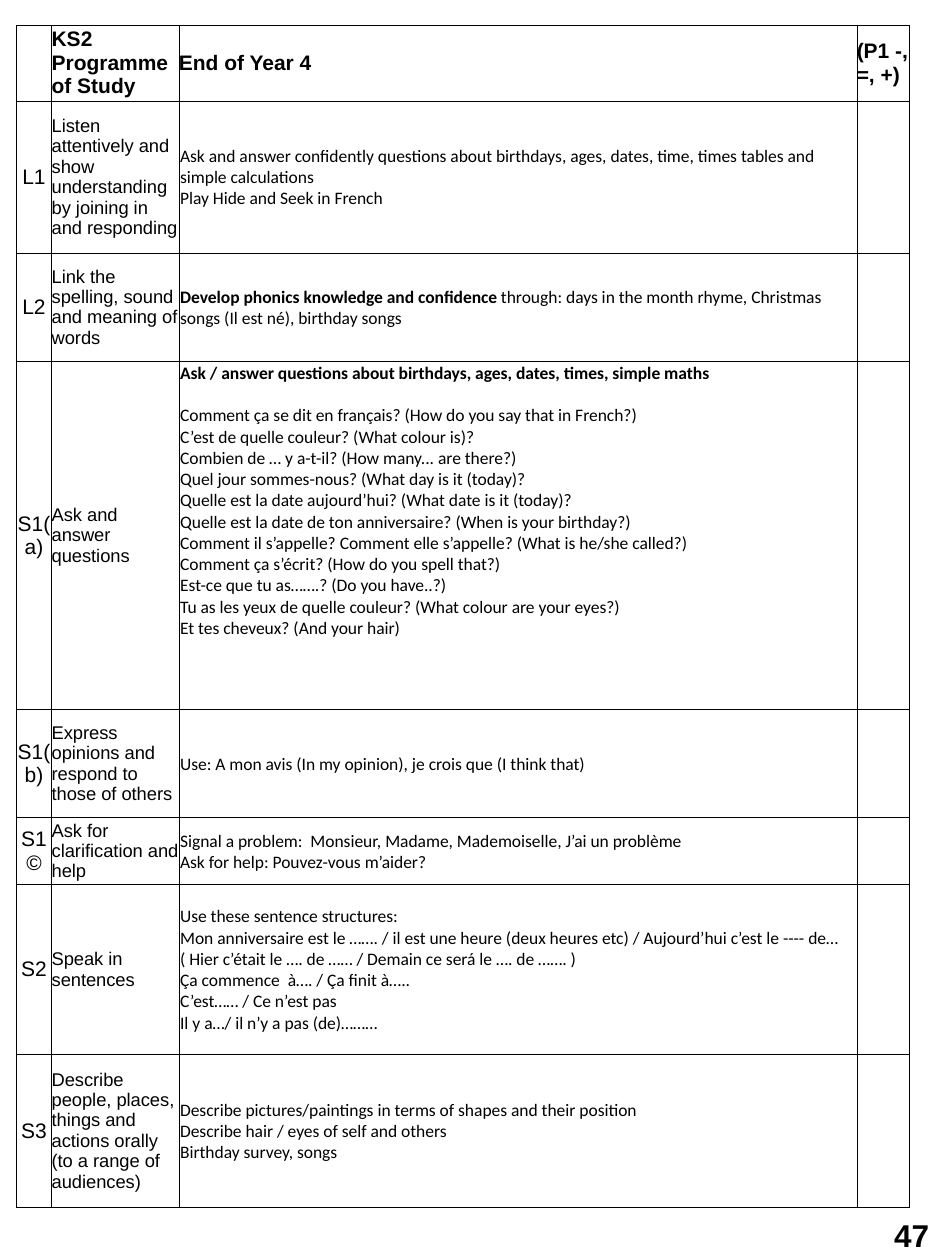
"""Build a French programme-of-study table for the end of Year 4."""
import dataclasses

import pptx
import pptx.dml.color
import pptx.enum.shapes
import pptx.enum.text
import pptx.oxml
import pptx.oxml.ns
import pptx.util

ALIGN = pptx.enum.text.PP_ALIGN
ANCHOR = pptx.enum.text.MSO_ANCHOR


@dataclasses.dataclass(frozen=True)
class Theme:
    ink: str = "000000"
    heading_font: str = "Arial"
    body_font: str = "Calibri"
    heading_size: float = 12
    aim_size: float = 10.5
    body_size: float = 10
    number_size: float = 18
    border_width: float = 0.25
    heading_gap: float = 12.2


class Page:
    """Hold the theme and current page, measured on a grid of 750 by 1000 units."""

    def __init__(self, deck, theme):
        self.theme = theme
        self.unit = deck.slide_width // 750
        self.page = deck.slides.add_slide(deck.slide_layouts[6])

    def place(self, *units):
        return [round(value * self.unit) for value in units]

    def span(self, para, text, font, size, bold=False):
        span = para.add_run()
        span.text = text
        span.font.name = font
        span.font.size = pptx.util.Pt(size)
        span.font.bold = bold
        span.font.color.rgb = pptx.dml.color.RGBColor.from_string(self.theme.ink)

    def lines(self, frame, lines, font, size, bold=False, align=ALIGN.LEFT):
        frame.word_wrap = True
        for index, line in enumerate(lines):
            para = frame.add_paragraph() if index else frame.paragraphs[0]
            para.alignment = align
            spans = [(line, bold)] if isinstance(line, str) else line
            for text, strong in spans:
                self.span(para, text, font, size, strong)

    def border(self, cell):
        properties = cell._tc.get_or_add_tcPr()
        width = pptx.util.Pt(self.theme.border_width)
        for side in ("lnL", "lnR", "lnT", "lnB"):
            properties.append(pptx.oxml.parse_xml(
                f'<a:{side} {pptx.oxml.ns.nsdecls("a")} w="{width}"><a:solidFill>'
                f'<a:srgbClr val="{self.theme.ink}"/></a:solidFill></a:{side}>'))

    def cell(self, cell, lines, font, size, bold=False, align=ALIGN.LEFT,
             anchor=ANCHOR.MIDDLE, margin=0):
        self.border(cell)
        cell.fill.background()
        if lines:
            cell.vertical_anchor = anchor
            cell.margin_bottom = 0
            cell.margin_left = cell.margin_right = cell.margin_top = self.place(margin)[0]
            self.lines(cell.text_frame, lines, font, size, bold, align)

    def table(self, left, top, columns, rows):
        table = self.page.shapes.add_table(
            len(rows), len(columns),
            *self.place(left, top, sum(columns), sum(rows))).table
        table.first_row = table.horz_banding = False
        for column, width in zip(table.columns, self.place(*columns)):
            column.width = width
        for row, height in zip(table.rows, self.place(*rows)):
            row.height = height
        return table

    def page_number(self, text, *area):
        box = self.page.shapes.add_shape(
            pptx.enum.shapes.MSO_SHAPE.ROUNDED_RECTANGLE, *self.place(*area))
        box.shadow.inherit = False
        box.fill.background()
        box.line.fill.background()
        box.text_frame.vertical_anchor = ANCHOR.MIDDLE
        self.lines(box.text_frame, [text], self.theme.heading_font,
                   self.theme.number_size, True, ALIGN.CENTER)


HEADINGS = ["", "KS2 Programme of Study", "End of Year 4", "(P1 -, =, +)"]
QUESTIONS = "S1(a)"
AIMS = [
    ("L1", "Listen attentively and show understanding by joining in and responding", [
        "Ask and answer confidently questions about birthdays, ages, dates, time, "
        "times tables and simple calculations",
        "Play Hide and Seek in French"]),
    ("L2", "Link the spelling, sound and meaning of words", [
        [("Develop phonics knowledge and confidence", True),
         (" through: days in the month rhyme, Christmas songs (Il est né), "
          "birthday songs", False)]]),
    (QUESTIONS, "Ask and answer questions", [
        [("Ask / answer questions about birthdays, ages, dates, times, simple maths", True)],
        "Comment ça se dit en français? (How do you say that in French?)",
        "C’est de quelle couleur? (What colour is)?",
        "Combien de … y a-t-il? (How many... are there?)",
        "Quel jour sommes-nous? (What day is it (today)?",
        "Quelle est la date aujourd’hui? (What date is it (today)?",
        "Quelle est la date de ton anniversaire? (When is your birthday?)",
        "Comment il s’appelle? Comment elle s’appelle? (What is he/she called?)",
        "Comment ça s’écrit? (How do you spell that?)",
        "Est-ce que tu as…….? (Do you have..?)",
        "Tu as les yeux de quelle couleur? (What colour are your eyes?)",
        "Et tes cheveux? (And your hair)"]),
    ("S1(b)", "Express opinions and respond to those of others", [
        "Use: A mon avis (In my opinion), je crois que (I think that)"]),
    ("S1©", "Ask for clarification and help", [
        "Signal a problem:  Monsieur, Madame, Mademoiselle, J’ai un problème",
        "Ask for help: Pouvez-vous m’aider?"]),
    ("S2", "Speak in sentences", [
        "Use these sentence structures:",
        "Mon anniversaire est le ……. / il est une heure (deux heures etc) / "
        "Aujourd’hui c’est le ---- de…",
        "( Hier c’était le …. de …… / Demain ce será le …. de ……. )",
        "Ça commence  à…. / Ça finit à…..",
        "C’est…… / Ce n’est pas",
        "Il y a…/ il n’y a pas (de)………"]),
    ("S3", "Describe people, places, things and actions orally (to a range of audiences)", [
        "Describe pictures/paintings in terms of shapes and their position",
        "Describe hair / eyes of self and others",
        "Birthday survey, songs"]),
]


def main():
    deck = pptx.Presentation()
    deck.slide_width = pptx.util.Inches(7.5)
    deck.slide_height = pptx.util.Inches(10)
    theme = Theme()
    page = Page(deck, theme)
    table = page.table(13, 20, [28, 101, 538, 42],
                       [60, 121, 86, 276, 86, 53, 135, 121])
    for column, heading in enumerate(HEADINGS):
        page.cell(table.cell(0, column), [heading] if heading else [],
                  theme.heading_font, theme.heading_size, bold=True)
    for row, (code, aim, outcomes) in enumerate(AIMS, start=1):
        anchor = ANCHOR.TOP if code == QUESTIONS else ANCHOR.MIDDLE
        page.cell(table.cell(row, 0), [code], theme.heading_font,
                  theme.heading_size, align=ALIGN.CENTER)
        page.cell(table.cell(row, 1), [aim], theme.heading_font, theme.aim_size)
        page.cell(table.cell(row, 2), outcomes, theme.body_font, theme.body_size,
                  anchor=anchor, margin=1)
        page.cell(table.cell(row, 3), [], theme.body_font, theme.body_size)
        if code == QUESTIONS:
            heading = table.cell(row, 2).text_frame.paragraphs[0]
            heading.space_after = pptx.util.Pt(theme.heading_gap)
    page.page_number("47", 696, 957, 55, 47)
    deck.save("out.pptx")


if __name__ == "__main__":
    main()
